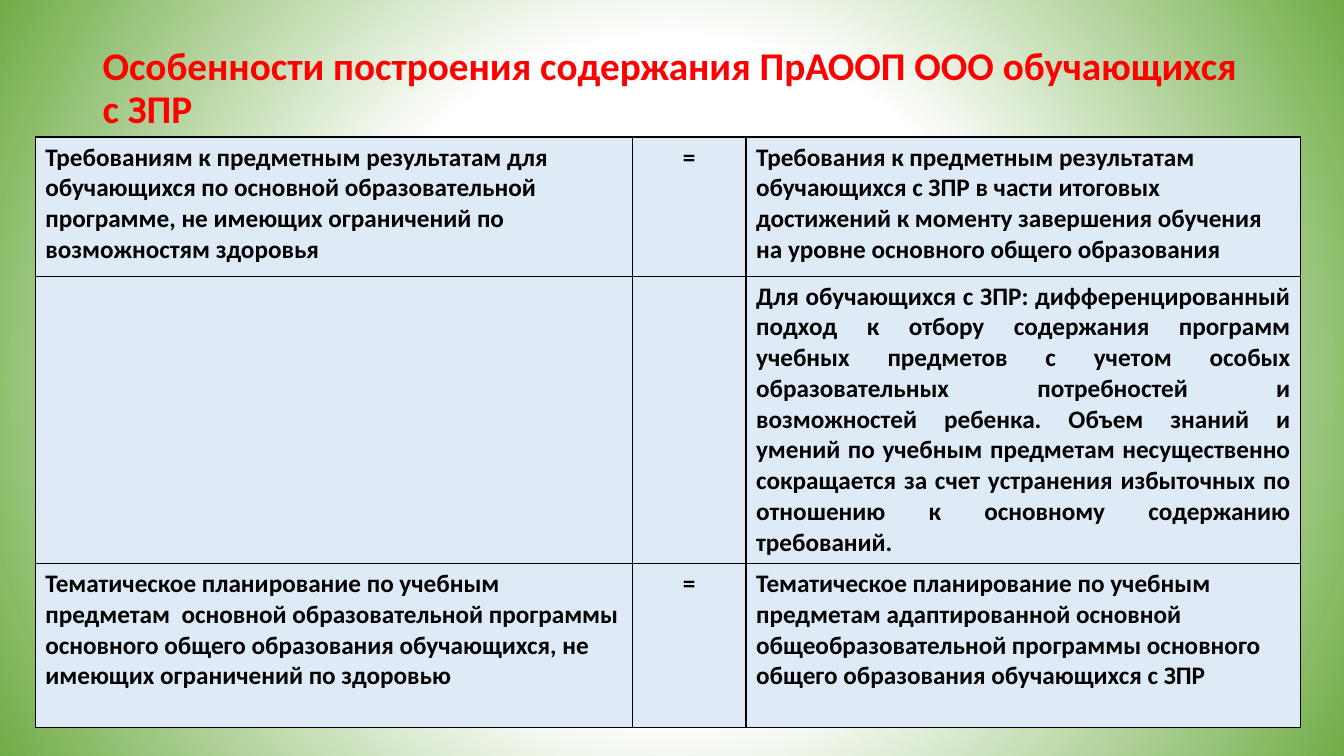
from dataclasses import dataclass

from pptx import Presentation
from pptx import util as u
from pptx.dml import color
from pptx.enum import text
from pptx.oxml import ns, parse_xml


@dataclass(frozen=True)
class Theme:
    """Colours, font and type sizes of the slide."""
    font: str = "Calibri"
    red: str = "FF0000"
    black: str = "000000"
    white: str = "FFFFFF"
    green: str = "70AD47"
    pale: str = "DEEBF7"
    head: int = 28
    body: int = 18
    rule: int = 1


THEME = Theme()
LEFT, MID, JUST = text.PP_ALIGN.LEFT, text.PP_ALIGN.CENTER, text.PP_ALIGN.JUSTIFY
TITLE = "Особенности построения содержания ПрАООП ООО обучающихся с ЗПР"
COLS = [5.92, 1.13, 5.5]
ROWS = [
    (1.38, LEFT, [
        "Требованиям к предметным результатам для обучающихся по основной "
        "образовательной программе, не имеющих ограничений по возможностям здоровья",
        "=",
        "Требования к предметным результатам обучающихся с ЗПР в части итоговых "
        "достижений к моменту завершения обучения на уровне основного общего образования",
    ]),
    (2.85, JUST, [
        "",
        "",
        "Для обучающихся с ЗПР: дифференцированный подход к отбору содержания программ "
        "учебных предметов с учетом особых образовательных потребностей и возможностей "
        "ребенка. Объем знаний и умений по учебным предметам несущественно сокращается "
        "за счет устранения избыточных по отношению к основному содержанию требований.",
    ]),
    (1.63, LEFT, [
        "Тематическое планирование по учебным предметам  основной образовательной "
        "программы основного общего образования обучающихся, не имеющих ограничений "
        "по здоровью",
        "=",
        "Тематическое планирование по учебным предметам адаптированной основной "
        "общеобразовательной программы основного общего образования обучающихся с ЗПР",
    ]),
]


def paint(slide):
    """Fill the background with a radial gradient from white to green."""
    slide.background.fill.gradient()
    grad = slide.element.find(".//" + ns.qn("a:gradFill"))
    grad.getparent().replace(grad, parse_xml(
        f'<a:gradFill {ns.nsdecls("a")} rotWithShape="1"><a:gsLst>'
        f'<a:gs pos="0"><a:srgbClr val="{THEME.white}"/></a:gs>'
        f'<a:gs pos="44000"><a:srgbClr val="{THEME.white}"><a:alpha val="44000"/></a:srgbClr></a:gs>'
        f'<a:gs pos="100000"><a:srgbClr val="{THEME.green}"/></a:gs></a:gsLst>'
        '<a:path path="circle"><a:fillToRect l="50000" t="50000" r="50000" b="50000"/></a:path>'
        '</a:gradFill>'))


def write(frame, words, size, tint, align=LEFT):
    """Put one bold paragraph in a text frame."""
    para = frame.paragraphs[0]
    para.text = words
    para.alignment = align
    font = para.font
    font.name, font.size, font.bold = THEME.font, u.Pt(size), True
    font.color.rgb = color.RGBColor.from_string(tint)
    return para


def add_title(slide):
    """Add the red heading."""
    box = slide.shapes.add_textbox(*map(u.Inches, (0.92, 0.4, 11.5, 0.97)))
    frame = box.text_frame
    frame.word_wrap = True
    frame.vertical_anchor = text.MSO_ANCHOR.MIDDLE
    write(frame, TITLE, THEME.head, THEME.red).line_spacing = 0.9


def frame_cell(cell):
    """Draw a thin black border and a pale fill on a cell."""
    cell.fill.solid()
    cell.fill.fore_color.rgb = color.RGBColor.from_string(THEME.pale)
    props = cell._tc.get_or_add_tcPr()
    for spot, side in enumerate("LRTB"):
        props.insert(spot, parse_xml(
            f'<a:ln{side} {ns.nsdecls("a")} w="{u.Pt(THEME.rule)}"><a:solidFill>'
            f'<a:srgbClr val="{THEME.black}"/></a:solidFill></a:ln{side}>'))


def add_grid(slide):
    """Add the table that compares the two programmes."""
    high = sum(row[0] for row in ROWS)
    area = map(u.Inches, (0.35, 1.36, sum(COLS), high))
    table = slide.shapes.add_table(len(ROWS), len(COLS), *area).table
    table.first_row = table.horz_banding = False
    for col, width in zip(table.columns, COLS):
        col.width = u.Inches(width)
    for line, (tall, align, words) in enumerate(ROWS):
        table.rows[line].height = u.Inches(tall)
        for spot, item in enumerate(words):
            cell = table.cell(line, spot)
            frame_cell(cell)
            write(cell.text_frame, item, THEME.body, THEME.black, MID if spot == 1 else align)


def main():
    """Build and save the slide."""
    deck = Presentation()
    deck.slide_width, deck.slide_height = u.Inches(13.33), u.Inches(7.5)
    slide = deck.slides.add_slide(deck.slide_layouts[6])
    paint(slide)
    add_title(slide)
    add_grid(slide)
    deck.save("out.pptx")


if __name__ == "__main__":
    main()
